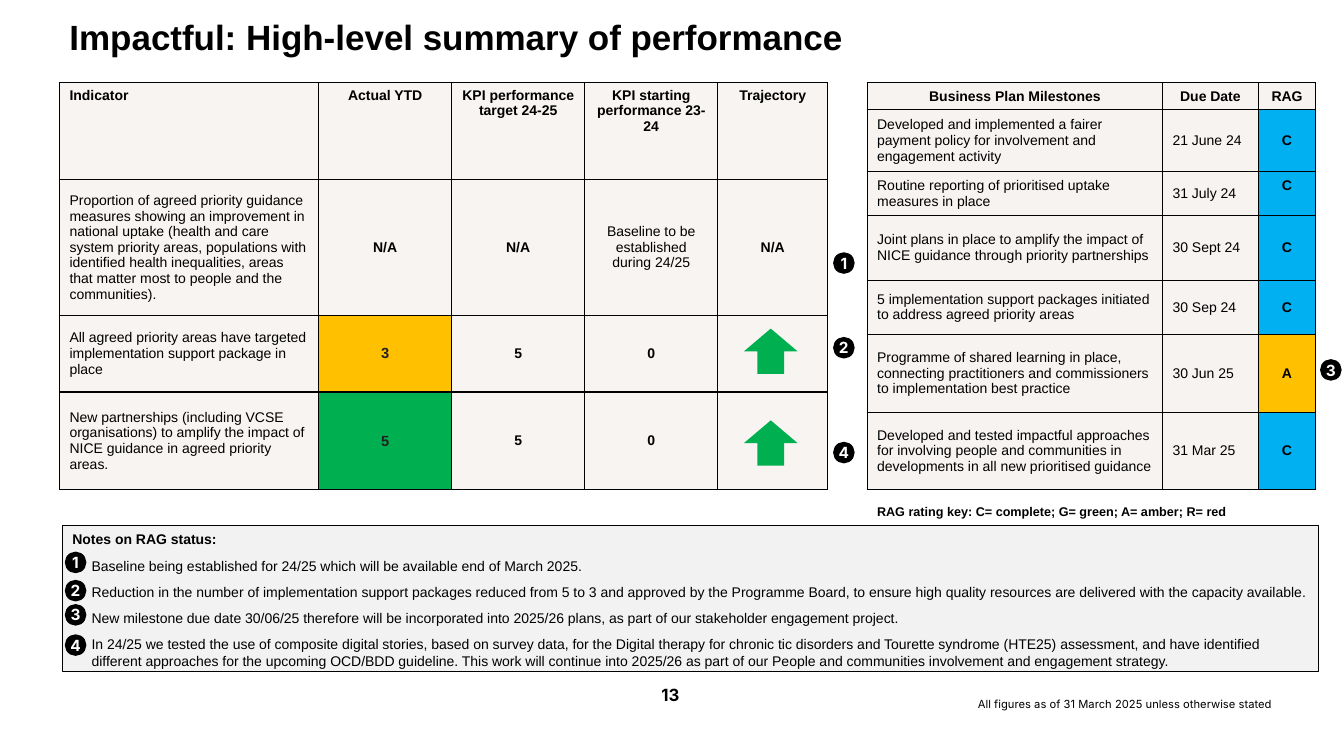
import pptx
import pptx.util
import pptx.dml.color
import pptx.enum.shapes
import pptx.enum.text
from lxml import etree
from pptx.oxml.ns import qn
from pptx.util import Inches, Pt

ALIGN = pptx.enum.text.PP_ALIGN
ANCHOR = pptx.enum.text.MSO_ANCHOR
SHAPES = pptx.enum.shapes.MSO_SHAPE

BLACK, WHITE, DARK = "000000", "FFFFFF", "222222"
AMBER, GREEN, BLUE, GREY = "FFC000", "00B050", "00B0F0", "F2F2F2"

INDICATORS = {
    "place": (0.59, 0.82),
    "columns": [2.57, 1.32, 1.32, 1.32, 1.09],
    "rows": [0.96, 1.35, 0.76, 0.97],
    "fill": "F7F4F1",
    "highlights": {(2, 1): AMBER, (3, 1): GREEN},
    "highlight_font": {"size": 10.5, "color": DARK},
    "header_anchor": ANCHOR.TOP,
    "centred": {(row, column) for row in range(4) for column in range(1, 5)},
    "cells": [
        ["Indicator", "Actual YTD", "KPI performance target 24-25",
         "KPI starting performance 23-24", "Trajectory"],
        ["Proportion of agreed priority guidance measures showing an improvement in national "
         "uptake (health and care system priority areas, populations with identified health "
         "inequalities, areas that matter most to people and the communities). ",
         "N/A", "N/A", "Baseline to be established during 24/25", "N/A"],
        ["All agreed priority areas have targeted implementation support package in place",
         "3", "5", "0", ""],
        ["New partnerships (including VCSE organisations) to amplify the impact of "
         "NICE guidance in agreed priority areas. ", "5", "5", "0", ""],
    ],
}
MILESTONES = {
    "place": (8.6, 0.82),
    "columns": [2.93, 0.95, 0.57],
    "rows": [0.27, 0.61, 0.44, 0.64, 0.54, 0.77, 0.77],
    "fill": "F7F3F1",
    "highlights": {(row, 2): AMBER if row == 5 else BLUE for row in range(1, 7)},
    "highlight_font": {},
    "header_anchor": ANCHOR.BOTTOM,
    "centred": {(0, 0), (0, 1)} | {(row, 2) for row in range(7)},
    "cells": [
        ["Business Plan Milestones", "Due Date", "RAG"],
        ["Developed and implemented a fairer payment policy for involvement and "
         "engagement activity ", "21 June 24", "C"],
        ["Routine reporting of prioritised uptake measures in place", "31 July 24", "C"],
        ["Joint plans in place to amplify the impact of NICE guidance through priority "
         "partnerships ", "30 Sept 24", "C"],
        ["5 implementation support packages initiated to address agreed priority areas ",
         "30 Sep 24", "C"],
        ["Programme of shared learning in place, connecting practitioners and "
         "commissioners to implementation best practice", "30 Jun 25", "A"],
        ["Developed and tested impactful approaches for involving people and communities "
         "in developments in all new prioritised guidance", "31 Mar 25", "C"],
    ],
}
LABELS = [
    ("13", (5.15, 6.74, 3, 0.4), {"size": 12, "name": "Inter", "bold": True}, ALIGN.CENTER, 1),
    ("Impactful: High-level summary of performance", (0.59, 0.15, 10.56, 0.64),
     {"size": 25, "bold": True}, ALIGN.LEFT, 0.9),
    ("RAG rating key: C= complete; G= green; A= amber; R= red", (8.6, 4.95, 3.91, 0.25),
     {"size": 9, "bold": True}, ALIGN.LEFT, 1),
    ("All figures as of 31 March 2025 unless otherwise stated", (9.6, 6.87, 3.48, 0.24),
     {"size": 8, "name": "Inter"}, ALIGN.LEFT, 1),
]
NOTES_TITLE = "Notes on RAG status:"
NOTES = [
    "Baseline being established for 24/25 which will be available end of March 2025.",
    "Reduction in the number of implementation support packages reduced from 5 to 3 and approved "
    "by the Programme Board, to ensure high quality resources are delivered with the capacity "
    "available.",
    "New milestone due date 30/06/25 therefore will be incorporated into 2025/26 plans, as part "
    "of our stakeholder engagement project.",
    "In 24/25 we tested the use of composite digital stories, based on survey data, for the "
    "Digital therapy for chronic tic disorders and Tourette syndrome (HTE25) assessment, and have "
    "identified different approaches for the upcoming OCD/BDD guideline. This work will continue "
    "into 2025/26 as part of our People and communities involvement and engagement strategy.",
]
BADGES = [
    ("1", 0.65, 5.48), ("2", 0.65, 5.76), ("3", 0.65, 6), ("4", 0.65, 6.3),
    ("1", 8.27, 2.51), ("2", 8.27, 3.35), ("3", 13.1, 3.57), ("4", 8.27, 4.39),
]
ARROW_TOPS = [3.26, 4.17]


def rgb(value):
    return pptx.dml.color.RGBColor.from_string(value)


def write(paragraph, text, align=ALIGN.LEFT, **font):
    paragraph.alignment = align
    run = paragraph.add_run()
    run.text = text
    values = {"size": 10, "name": "Arial", "bold": False, "color": BLACK} | font
    run.font.color.rgb = rgb(values.pop("color"))
    values["size"] = Pt(values["size"])
    for name, value in values.items():
        setattr(run.font, name, value)


def add_shape(slide, kind, box, fill, line_width=0):
    shape = slide.shapes.add_shape(kind, *map(Inches, box))
    shape.shadow.inherit = False
    shape.fill.solid()
    shape.fill.fore_color.rgb = rgb(fill)
    if line_width:
        shape.line.color.rgb = rgb(BLACK)
        shape.line.width = Pt(line_width)
    else:
        shape.line.fill.background()
    return shape


def add_borders(cell):
    properties = cell._tc.get_or_add_tcPr()
    for index, side in enumerate(("lnL", "lnR", "lnT", "lnB")):
        line = etree.Element(qn(f"a:{side}"), w=str(Pt(1)))
        fill = etree.SubElement(line, qn("a:solidFill"))
        etree.SubElement(fill, qn("a:srgbClr"), val=BLACK)
        properties.insert(index, line)


def add_table(slide, data):
    columns, rows = data["columns"], data["rows"]
    box = (*data["place"], sum(columns), sum(rows))
    table = slide.shapes.add_table(len(rows), len(columns), *map(Inches, box)).table
    for column, width in zip(table.columns, columns):
        column.width = Inches(width)
    for row, height in zip(table.rows, rows):
        row.height = Inches(height)
    for r, texts in enumerate(data["cells"]):
        for c, text in enumerate(texts):
            cell = table.cell(r, c)
            cell.fill.solid()
            cell.fill.fore_color.rgb = rgb(data["highlights"].get((r, c), data["fill"]))
            cell.vertical_anchor = ANCHOR.MIDDLE if r else data["header_anchor"]
            add_borders(cell)
            font = data["highlight_font"] if (r, c) in data["highlights"] else {}
            align = ALIGN.CENTER if (r, c) in data["centred"] else ALIGN.LEFT
            # Headings and short values such as N/A are bold
            write(cell.text_frame.paragraphs[0], text, align,
                  bold=r == 0 or len(text) <= 3, **font)
    return table


def add_notes(slide):
    frame = add_shape(slide, SHAPES.RECTANGLE, (0.62, 5.21, 12.46, 1.45), GREY, 0.75).text_frame
    frame.word_wrap = True
    frame.vertical_anchor = ANCHOR.TOP
    for index, text in enumerate([NOTES_TITLE, *NOTES]):
        paragraph = frame.add_paragraph() if index else frame.paragraphs[0]
        paragraph.space_after = Pt(6)
        paragraph.line_spacing = 1.05
        if index:
            properties = paragraph._p.get_or_add_pPr()
            properties.set("marL", str(Inches(0.19)))
            properties.set("indent", str(Inches(-0.19)))
            etree.SubElement(properties, qn("a:buFont"), typeface="Arial")
            etree.SubElement(properties, qn("a:buChar"), char="•")
        write(paragraph, text, bold=index == 0)


def add_badge(slide, number, left, top):
    frame = add_shape(slide, SHAPES.OVAL, (left, top, 0.2, 0.2), BLACK, 1).text_frame
    for side in ("left", "right", "top", "bottom"):
        setattr(frame, f"margin_{side}", 0)
    frame.word_wrap = False
    frame.vertical_anchor = ANCHOR.MIDDLE
    write(frame.paragraphs[0], number, ALIGN.CENTER,
          size=11, name="Inter", bold=True, color=WHITE)


def main():
    presentation = pptx.Presentation()
    presentation.slide_width, presentation.slide_height = Inches(13.33), Inches(7.5)
    slide = presentation.slides.add_slide(presentation.slide_layouts[6])
    for text, box, font, align, spacing in LABELS:
        frame = slide.shapes.add_textbox(*map(Inches, box)).text_frame
        frame.word_wrap = True
        frame.paragraphs[0].line_spacing = spacing
        write(frame.paragraphs[0], text, align, **font)
    add_table(slide, INDICATORS)
    milestones = add_table(slide, MILESTONES)
    milestones.cell(2, 2).margin_bottom = Inches(0.21)
    for top in ARROW_TOPS:
        add_shape(slide, SHAPES.UP_ARROW, (7.38, top, 0.53, 0.45), GREEN)
    add_notes(slide)
    for badge in BADGES:
        add_badge(slide, *badge)
    presentation.save("out.pptx")


if __name__ == "__main__":
    main()
